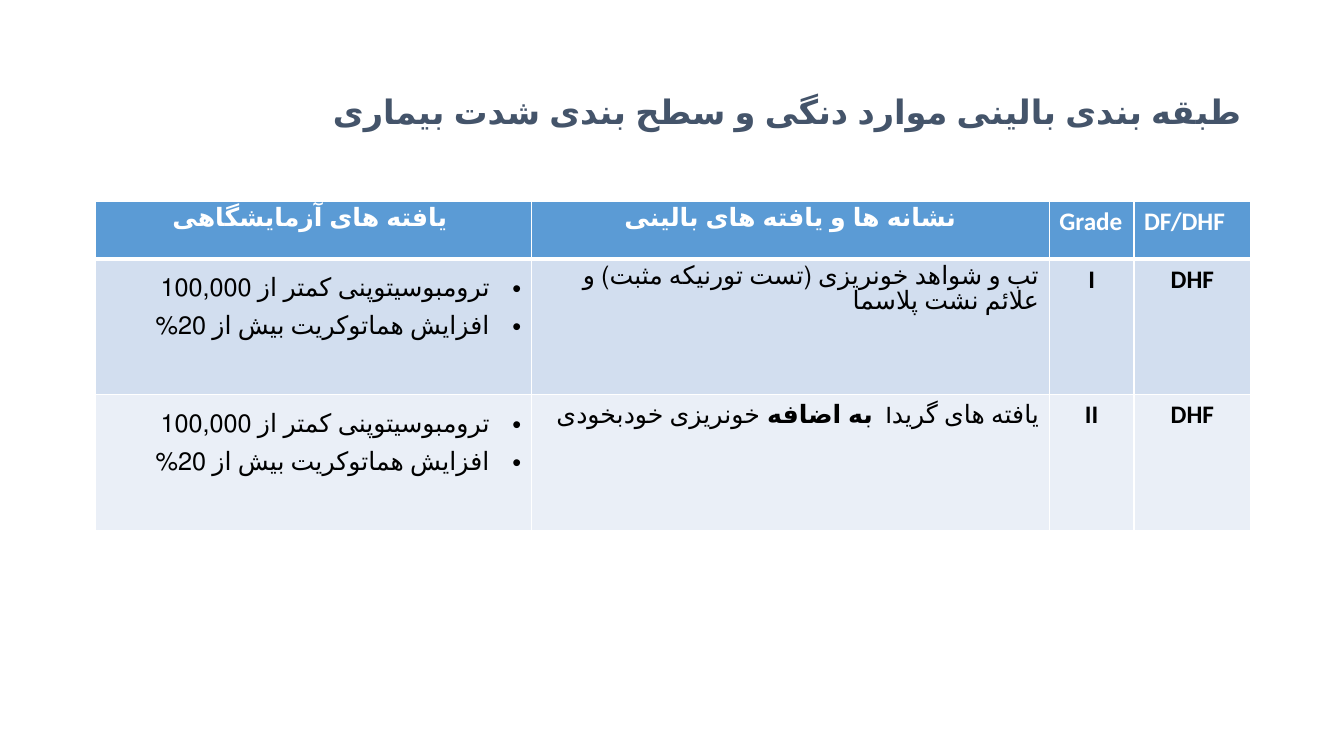
"""Build a slide that grades dengue cases by clinical and laboratory findings."""
from lxml.etree import SubElement
from pptx import Presentation
from pptx.dml.color import RGBColor
from pptx.enum.lang import MSO_LANGUAGE_ID
from pptx.enum.text import MSO_ANCHOR, PP_ALIGN
from pptx.oxml.ns import qn
from pptx.util import Pt

FONT = "Calibri"
TITLE = "طبقه بندی بالینی موارد دنگی و سطح بندی شدت بیماری "
HEADERS = [
    ("یافته های آزمایشگاهی ", PP_ALIGN.CENTER),
    ("نشانه ها و یافته های بالینی", PP_ALIGN.CENTER),
    ("Grade", PP_ALIGN.LEFT),
    ("DF/DHF", PP_ALIGN.LEFT),
]
LABORATORY = ["ترومبوسیتوپنی کمتر از 100,000", "افزایش هماتوکریت بیش از 20%"]
CASES = [
    ([("تب و شواهد خونریزی (تست تورنیکه مثبت) و علائم نشت پلاسما", False)],
     "I", "DHF", "D2DEEF"),
    ([("یافته های گریدI  ", False), ("به اضافه ", True), ("خونریزی خودبخودی", False)],
     "II", "DHF", "EAEFF7"),
]
COLUMN_WIDTHS = [311.5, 370, 60.5, 83.5]
ROW_HEIGHTS = [41, 97, 97]
TABLE_LEFT, TABLE_TOP = 68, 144
BULLET_INDENT = 22.5


def color(value):
    return RGBColor.from_string(value)


def add_run(paragraph, text, size, hex_color, bold):
    run = paragraph.add_run()
    run.text = text
    run.font.language_id = (
        MSO_LANGUAGE_ID.ENGLISH_US if text.isascii() else MSO_LANGUAGE_ID.FARSI)
    run.font.name = FONT
    run.font.size = Pt(size)
    run.font.bold = bold
    run.font.color.rgb = color(hex_color)


def set_right_to_left(paragraph):
    paragraph.alignment = PP_ALIGN.RIGHT
    paragraph._p.get_or_add_pPr().set("rtl", "1")


def add_bullet(paragraph):
    properties = paragraph._p.get_or_add_pPr()
    properties.set("marL", str(Pt(BULLET_INDENT)))
    properties.set("indent", str(-Pt(BULLET_INDENT)))
    SubElement(properties, qn("a:buFont")).set("typeface", "Arial")
    SubElement(properties, qn("a:buChar")).set("char", "•")


def style_cell(cell, fill, bottom_width=1):
    properties = cell._tc.get_or_add_tcPr()
    for side, width in (("L", 1), ("R", 1), ("T", 1), ("B", bottom_width)):
        line = SubElement(properties, qn(f"a:ln{side}"), w=str(Pt(width)))
        line_fill = SubElement(line, qn("a:solidFill"))
        SubElement(line_fill, qn("a:srgbClr")).set("val", "FFFFFF")
    cell.fill.solid()
    cell.fill.fore_color.rgb = color(fill)


def add_title(slide):
    shape = slide.shapes.add_textbox(Pt(66), Pt(29), Pt(828), Pt(104))
    frame = shape.text_frame
    frame.word_wrap = True
    frame.vertical_anchor = MSO_ANCHOR.MIDDLE
    paragraph = frame.paragraphs[0]
    set_right_to_left(paragraph)
    paragraph.line_spacing = 0.9
    add_run(paragraph, TITLE, 24, "44546A", True)


def fill_laboratory(cell):
    frame = cell.text_frame
    for index, finding in enumerate(LABORATORY):
        paragraph = frame.add_paragraph() if index else frame.paragraphs[0]
        set_right_to_left(paragraph)
        paragraph.line_spacing = 1.5
        add_bullet(paragraph)
        add_run(paragraph, finding, 18, "000000", False)


def add_grading_table(slide):
    table = slide.shapes.add_table(
        len(ROW_HEIGHTS), len(COLUMN_WIDTHS), Pt(TABLE_LEFT), Pt(TABLE_TOP),
        Pt(sum(COLUMN_WIDTHS)), Pt(sum(ROW_HEIGHTS))).table
    for column, width in zip(table.columns, COLUMN_WIDTHS):
        column.width = Pt(width)
    for row, height in zip(table.rows, ROW_HEIGHTS):
        row.height = Pt(height)

    for column, (header, alignment) in enumerate(HEADERS):
        cell = table.cell(0, column)
        style_cell(cell, "5B9BD5", bottom_width=3)
        paragraph = cell.text_frame.paragraphs[0]
        paragraph.alignment = alignment
        add_run(paragraph, header, 18, "FFFFFF", True)

    for row, (clinical, grade, disease, fill) in enumerate(CASES, start=1):
        for column in range(len(COLUMN_WIDTHS)):
            style_cell(table.cell(row, column), fill)
        fill_laboratory(table.cell(row, 0))
        paragraph = table.cell(row, 1).text_frame.paragraphs[0]
        set_right_to_left(paragraph)
        for text, bold in clinical:
            add_run(paragraph, text, 18, "000000", bold)
        for column, label in ((2, grade), (3, disease)):
            paragraph = table.cell(row, column).text_frame.paragraphs[0]
            paragraph.alignment = PP_ALIGN.CENTER
            add_run(paragraph, label, 18, "000000", True)


def main():
    presentation = Presentation()
    presentation.slide_width, presentation.slide_height = Pt(960), Pt(540)
    slide = presentation.slides.add_slide(presentation.slide_layouts[6])
    add_title(slide)
    add_grading_table(slide)
    presentation.save("out.pptx")


if __name__ == "__main__":
    main()
